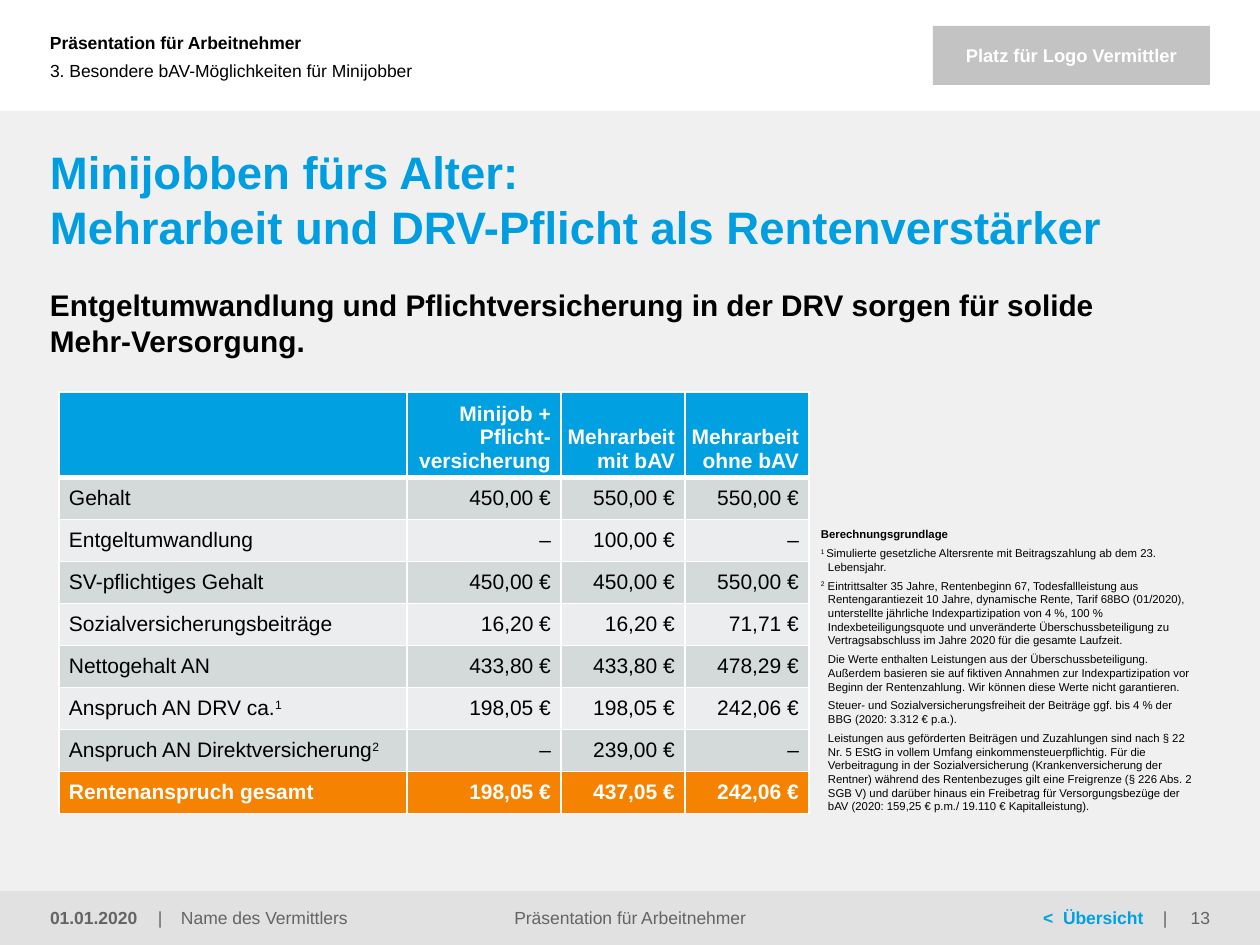
"""Build the slide on retirement provision for mini-jobbers."""
from dataclasses import dataclass
from typing import Optional

from lxml.etree import SubElement
from pptx import Presentation
from pptx.dml.color import RGBColor
from pptx.enum.shapes import MSO_SHAPE as Shape
from pptx.enum.text import MSO_ANCHOR as Anchor, PP_ALIGN as Align
from pptx.oxml.ns import qn
from pptx.util import Emu, Pt

PX = 914400 / 126
FONT = "Arial"
WHITE = RGBColor(0xFF, 0xFF, 0xFF)
BLACK = RGBColor(0x00, 0x00, 0x00)
PAGE_GREY = RGBColor(0xF0, 0xF0, 0xF0)
FOOTER_GREY = RGBColor(0xE1, 0xE1, 0xE1)
LOGO_GREY = RGBColor(0xC3, 0xC3, 0xC3)
TEXT_GREY = RGBColor(0x64, 0x64, 0x64)
BLUE = RGBColor(0x00, 0xA0, 0xE1)
TITLE_BLUE = RGBColor(0x00, 0x9E, 0xE0)
ORANGE = RGBColor(0xF5, 0x82, 0x00)
BAND_DARK = RGBColor(0xD4, 0xD9, 0xDA)
BAND_LIGHT = RGBColor(0xEB, 0xED, 0xEE)


@dataclass(frozen=True)
class Span:
    text: str
    raised: bool = False


@dataclass(frozen=True)
class Style:
    size: float = 10
    color: RGBColor = BLACK
    bold: bool = False
    align: Align = Align.LEFT


@dataclass(frozen=True)
class Para:
    spans: tuple
    style: Style = Style()
    before: float = 0
    margin: int = 0
    indent: int = 0


@dataclass(frozen=True)
class Box:
    left: int
    top: int
    width: int
    height: int
    paras: tuple
    anchor: Anchor = Anchor.MIDDLE


def px(length: int) -> Emu:
    return Emu(round(length * PX))


def line(text: str, style: Style, **options) -> Para:
    return Para((Span(text),), style, **options)


def write_para(paragraph, para: Para) -> None:
    style = para.style
    paragraph.alignment = style.align
    paragraph.space_before = Pt(para.before)
    props = paragraph._p.get_or_add_pPr()
    props.set("marL", str(px(para.margin)))
    props.set("indent", str(px(para.indent)))
    font = paragraph.font
    font.name, font.size, font.bold = FONT, Pt(style.size), style.bold
    font.color.rgb = style.color
    for span in para.spans:
        for number, text in enumerate(span.text.split("\n")):
            if number:
                paragraph.add_line_break()
            run = paragraph.add_run()
            run.text = text
            if span.raised:
                run.font._element.set("baseline", "30000")


def write_frame(frame, paras: tuple) -> None:
    for number, para in enumerate(paras):
        write_para(frame.add_paragraph() if number else frame.paragraphs[0], para)


def set_margins(target, insets: tuple) -> None:
    (target.margin_left, target.margin_top,
     target.margin_right, target.margin_bottom) = map(px, insets)


def draw_box(page, box: Box) -> None:
    shape = page.shapes.add_textbox(*map(px, (box.left, box.top, box.width, box.height)))
    frame = shape.text_frame
    frame.word_wrap = True
    frame.vertical_anchor = box.anchor
    set_margins(frame, (0, 0, 0, 0))
    write_frame(frame, box.paras)


def footer_box(left: int, width: int, text: str, color: RGBColor = TEXT_GREY,
               bold: bool = False, align: Align = Align.LEFT) -> Box:
    return Box(left, 890, width, 54, (line(text, Style(10, color, bold, align)),))


def draw_panel(page, area: tuple, color: RGBColor):
    panel = page.shapes.add_shape(Shape.RECTANGLE, *map(px, area))
    panel.shadow.inherit = False
    panel.fill.solid()
    panel.fill.fore_color.rgb = color
    panel.line.fill.background()
    return panel


def style_cell(cell, fill: RGBColor, widths: dict) -> None:
    props = cell._tc.get_or_add_tcPr()
    for side, width in widths.items():
        border = SubElement(props, qn(f"a:ln{side}"), w=str(Pt(width)))
        color = SubElement(SubElement(border, qn("a:solidFill")), qn("a:srgbClr"))
        color.set("val", str(WHITE))
    cell.fill.solid()
    cell.fill.fore_color.rgb = fill


def draw_table(page, left: int, top: int, columns: tuple, heights: tuple, rows: tuple) -> None:
    area = (left, top, sum(columns), sum(heights))
    table = page.shapes.add_table(len(rows), len(columns), *map(px, area)).table
    for column, width in zip(table.columns, columns):
        column.width = px(width)
    last = len(rows) - 1
    for r, (height, values) in enumerate(zip(heights, rows)):
        table.rows[r].height = px(height)
        strong = r in (0, last)
        fill = {0: BLUE, last: ORANGE}.get(r, BAND_DARK if r % 2 else BAND_LIGHT)
        widths = {"L": 1, "R": 1, "T": 3 if r == 1 else 1, "B": 1 if r else 3}
        for c, value in enumerate(values):
            cell = table.cell(r, c)
            style_cell(cell, fill, widths)
            cell.vertical_anchor = Anchor.MIDDLE if r else Anchor.BOTTOM
            inner = 0 if (r, c) == (0, 1) else 5
            set_margins(cell, (inner, 5, 10, 5) if c else (10, 5, 5, 5))
            style = Style(12, WHITE if strong else BLACK, strong,
                          Align.RIGHT if c else Align.LEFT)
            spans = value if isinstance(value, tuple) else (Span(value),)
            write_para(cell.text_frame.paragraphs[0], Para(spans, style))


NOTE = Style(6.5)
NOTES = (
    line("Berechnungsgrundlage", Style(6.5, bold=True)),
    Para((Span("1 ", True), Span("Simulierte gesetzliche Altersrente mit Beitragszahlung ab dem 23. Lebensjahr.")), NOTE, 3, 7, -7),
    Para((Span("2", True), Span(" Eintrittsalter 35 Jahre, Rentenbeginn 67, Todesfallleistung aus Rentengarantiezeit 10 Jahre, dynamische Rente, Tarif 68BO (01/2020), unterstellte jährliche Indexpartizipation von 4 %, 100 % Indexbeteiligungsquote und unveränderte Überschussbeteiligung zu Vertragsabschluss im Jahre 2020 für die gesamte Laufzeit.")), NOTE, 3, 7, -7),
    *(line(text, NOTE, before=3, margin=7) for text in (
        "Die Werte enthalten Leistungen aus der Überschussbeteiligung. Außerdem basieren sie auf fiktiven Annahmen zur Indexpartizipation vor Beginn der Rentenzahlung. Wir können diese Werte nicht garantieren.",
        "Steuer- und Sozialversicherungsfreiheit der Beiträge ggf. bis 4 % der BBG (2020: 3.312 € p.a.).",
        "Leistungen aus geförderten Beiträgen und Zuzahlungen sind nach § 22 Nr. 5 EStG in vollem Umfang einkommensteuerpflichtig. Für die Verbeitragung in der Sozialversicherung (Krankenversicherung der Rentner) während des Rentenbezuges gilt eine Freigrenze (§ 226 Abs. 2 SGB V) und darüber hinaus ein Freibetrag für Versorgungsbezüge der bAV (2020: 159,25 € p.m./ 19.110 € Kapitalleistung).",
    )),
)
BOXES = (
    footer_box(50, 105, "01.01.2020", bold=True),
    footer_box(158, 15, "|"),
    footer_box(181, 280, "Name des Vermittlers"),
    footer_box(370, 520, "Präsentation für Arbeitnehmer", align=Align.CENTER),
    footer_box(1043, 18, "<", BLUE, True),
    footer_box(1063, 95, "Übersicht", BLUE, True),
    footer_box(1163, 15, "|"),
    footer_box(1180, 30, "13", align=Align.RIGHT),
    Box(50, 0, 829, 85, (line("Präsentation für Arbeitnehmer", Style(bold=True)),)),
    Box(50, 31, 851, 79, (line("3. Besondere bAV-Möglichkeiten für Minijobber", Style()),)),
    Box(50, 144, 1162, 110, (line("Minijobben fürs Alter:\nMehrarbeit und DRV-Pflicht als Rentenverstärker", Style(26, TITLE_BLUE, True)),), Anchor.TOP),
    Box(50, 287, 1162, 72, (line("Entgeltumwandlung und Pflichtversicherung in der DRV sorgen für solide\nMehr-Versorgung.", Style(17, bold=True)),), Anchor.TOP),
    Box(821, 524, 372, 289, NOTES, Anchor.BOTTOM),
)
ROWS = (
    ("", "Minijob + Pflicht-versicherung", "Mehrarbeit\nmit bAV", "Mehrarbeit\nohne bAV"),
    ("Gehalt", "450,00 €", "550,00 €", "550,00 €"),
    ("Entgeltumwandlung", "–", "100,00 €", "–"),
    ("SV-pflichtiges Gehalt", "450,00 €", "450,00 €", "550,00 €"),
    ("Sozialversicherungsbeiträge", "16,20 €", "16,20 €", "71,71 €"),
    ("Nettogehalt AN", "433,80 €", "433,80 €", "478,29 €"),
    ((Span("Anspruch AN DRV ca."), Span("1", True)), "198,05 €", "198,05 €", "242,06 €"),
    ((Span("Anspruch AN Direktversicherung"), Span("2", True)), "–", "239,00 €", "–"),
    ("Rentenanspruch gesamt", "198,05 €", "437,05 €", "242,06 €"),
)


def main() -> None:
    deck = Presentation()
    deck.slide_width, deck.slide_height = px(1260), px(945)
    page = deck.slides.add_slide(deck.slide_layouts[6])
    draw_panel(page, (0, 111, 1260, 834), PAGE_GREY)
    draw_panel(page, (0, 891, 1260, 54), FOOTER_GREY)
    logo = draw_panel(page, (933, 26, 277, 59), LOGO_GREY)
    logo.text_frame.vertical_anchor = Anchor.MIDDLE
    write_frame(logo.text_frame, (line("Platz für Logo Vermittler", Style(10.5, WHITE, True, Align.CENTER)),))
    for box in BOXES:
        draw_box(page, box)
    draw_table(page, 59, 392, (348, 154, 124, 124), (85,) + (42,) * 8, ROWS)
    deck.save("out.pptx")


if __name__ == "__main__":
    main()
